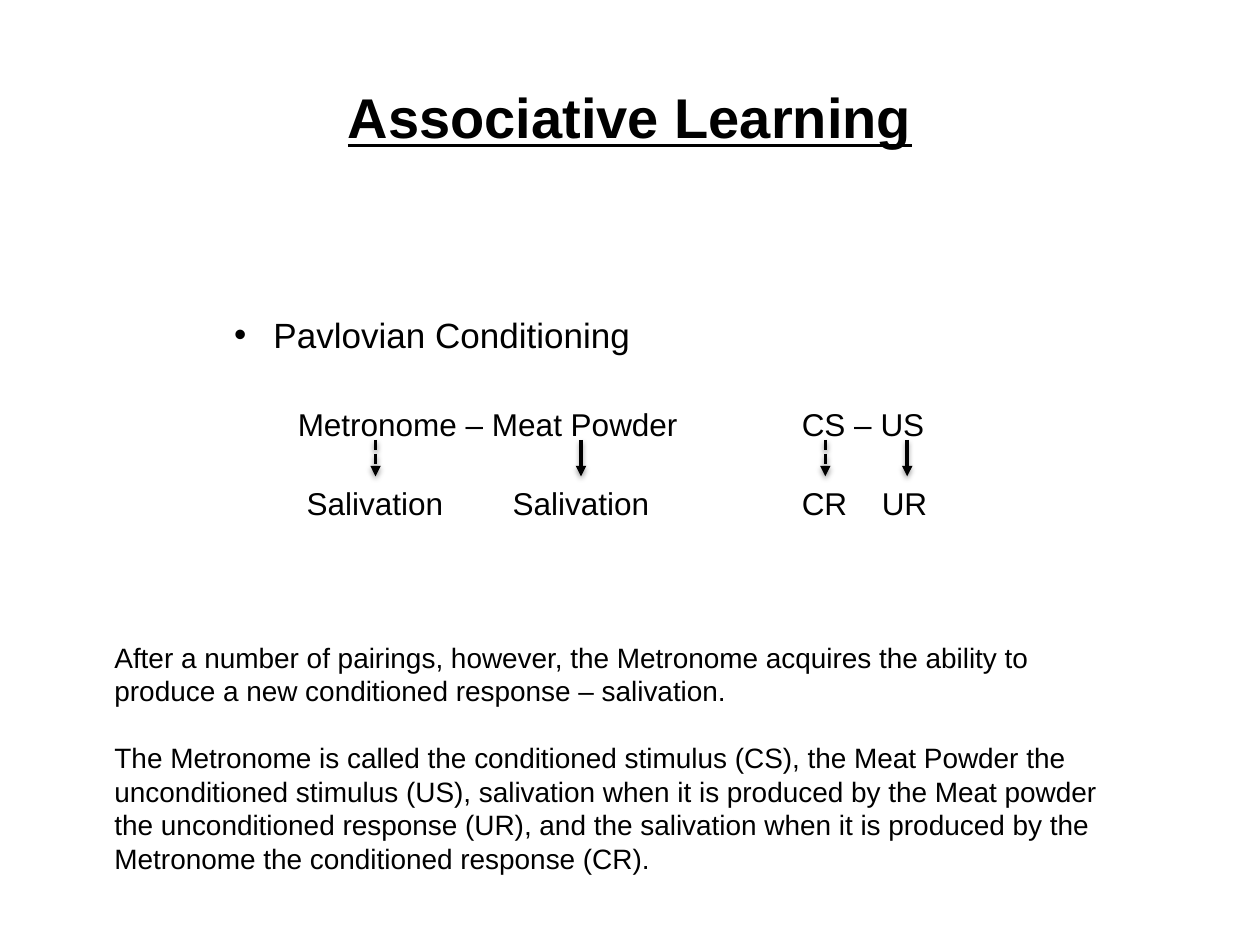
"""Build a slide on associative learning with a Pavlovian conditioning diagram."""
from lxml import etree
from pptx import Presentation
from pptx import util as u
from pptx.dml.color import RGBColor
from pptx.enum import dml, shapes, text
from pptx.oxml import ns

COLORS = {"ink": "000000", "background": "FFFFFF"}
FONT = "Arial"
ARROW_TOP, ARROW_BOTTOM = 251.3, 272.2
ARROWS = [(332, False), (214.6, True), (471.6, True), (518.4, False)]
DIAGRAM_ROWS = [
    ("\tMetronome – Meat Powder\tCS – US", 28, [36.4, 324.4]),
    ("\tSalivation\tSalivation\tCR\tUR", 23.5, [41.5, 159.2, 324.4, 370.1]),
]
EXPLANATION = [
    "After a number of pairings, however, the Metronome acquires the ability to "
    "produce a new conditioned response – salivation.",
    "The Metronome is called the conditioned stimulus (CS), the Meat Powder the "
    "unconditioned stimulus (US), salivation when it is produced by the Meat powder "
    "the unconditioned response (UR), and the salivation when it is produced by the "
    "Metronome the conditioned response (CR).",
]


def add_element(parent, tag, **attributes):
    """Append a DrawingML element and return it."""
    values = {name: str(value) for name, value in attributes.items()}
    return etree.SubElement(parent, ns.qn(f"a:{tag}"), values)


def add_text_frame(slide, left, top, width, height):
    """Add a wrapping text box and return its text frame."""
    box = slide.shapes.add_textbox(u.Pt(left), u.Pt(top), u.Pt(width), u.Pt(height))
    box.text_frame.word_wrap = True
    return box.text_frame


def add_paragraph(frame, content, size, space_before=0):
    """Add a one-run paragraph, using the empty first paragraph if it is free."""
    first = frame.paragraphs[0]
    paragraph = frame.add_paragraph() if first.runs else first
    paragraph.space_before = u.Pt(space_before)
    run = paragraph.add_run()
    run.text = content
    run.font.name = FONT
    run.font.size = u.Pt(size)
    run.font.color.rgb = RGBColor.from_string(COLORS["ink"])
    return paragraph


def add_title(slide, content):
    """Add the centred, underlined title."""
    frame = add_text_frame(slide, 36, 21.6, 648, 90)
    frame.vertical_anchor = text.MSO_ANCHOR.MIDDLE
    paragraph = add_paragraph(frame, content, 32)
    paragraph.alignment = text.PP_ALIGN.CENTER
    paragraph.runs[0].font.bold = True
    paragraph.runs[0].font.underline = True


def add_diagram_text(slide):
    """Add the bulleted heading and the tabbed rows of the diagram."""
    frame = add_text_frame(slide, 126.7, 175.7, 412.6, 123.8)
    heading = add_paragraph(frame, "Pavlovian Conditioning", 20)
    properties = heading._p.get_or_add_pPr()
    properties.set("marL", str(u.Pt(22.5)))
    properties.set("indent", str(u.Pt(-22.5)))
    add_element(properties, "buFont", typeface=FONT)
    add_element(properties, "buChar", char="•")
    for content, space_before, stops in DIAGRAM_ROWS:
        row = add_paragraph(frame, content, 18, space_before)
        tabs = add_element(row._p.get_or_add_pPr(), "tabLst")
        for stop in stops:
            add_element(tabs, "tab", pos=u.Pt(stop), algn="l")


def add_arrow(slide, x, dashed):
    """Add a downward arrow with a soft shadow."""
    arrow = slide.shapes.add_connector(
        shapes.MSO_CONNECTOR.STRAIGHT,
        u.Pt(x), u.Pt(ARROW_TOP), u.Pt(x), u.Pt(ARROW_BOTTOM))
    arrow.line.color.rgb = RGBColor.from_string(COLORS["ink"])
    arrow.line.width = u.Pt(2)
    if dashed:
        arrow.line.dash_style = dml.MSO_LINE.SQUARE_DOT
    add_element(arrow.line._get_or_add_ln(), "tailEnd", type="triangle")
    effects = add_element(arrow._element.spPr, "effectLst")
    shadow = add_element(effects, "outerShdw", blurRad=u.Pt(3.1), dist=u.Pt(1.6),
                         dir=5400000, rotWithShape=0)
    color = add_element(shadow, "srgbClr", val=COLORS["ink"])
    add_element(color, "alpha", val=38000)


def add_explanation(slide):
    """Add the explanatory paragraphs below the diagram."""
    frame = add_text_frame(slide, 58.3, 362.2, 589, 143.3)
    for index, content in enumerate(EXPLANATION):
        add_paragraph(frame, content, 16, 19 * index)


def main():
    """Create and save the presentation."""
    presentation = Presentation()
    presentation.slide_width, presentation.slide_height = u.Pt(720), u.Pt(540)
    slide = presentation.slides.add_slide(presentation.slide_layouts[6])
    slide.background.fill.solid()
    slide.background.fill.fore_color.rgb = RGBColor.from_string(COLORS["background"])
    add_title(slide, "Associative Learning")
    add_diagram_text(slide)
    for x, dashed in ARROWS:
        add_arrow(slide, x, dashed)
    add_explanation(slide)
    presentation.save("out.pptx")


if __name__ == "__main__":
    main()
